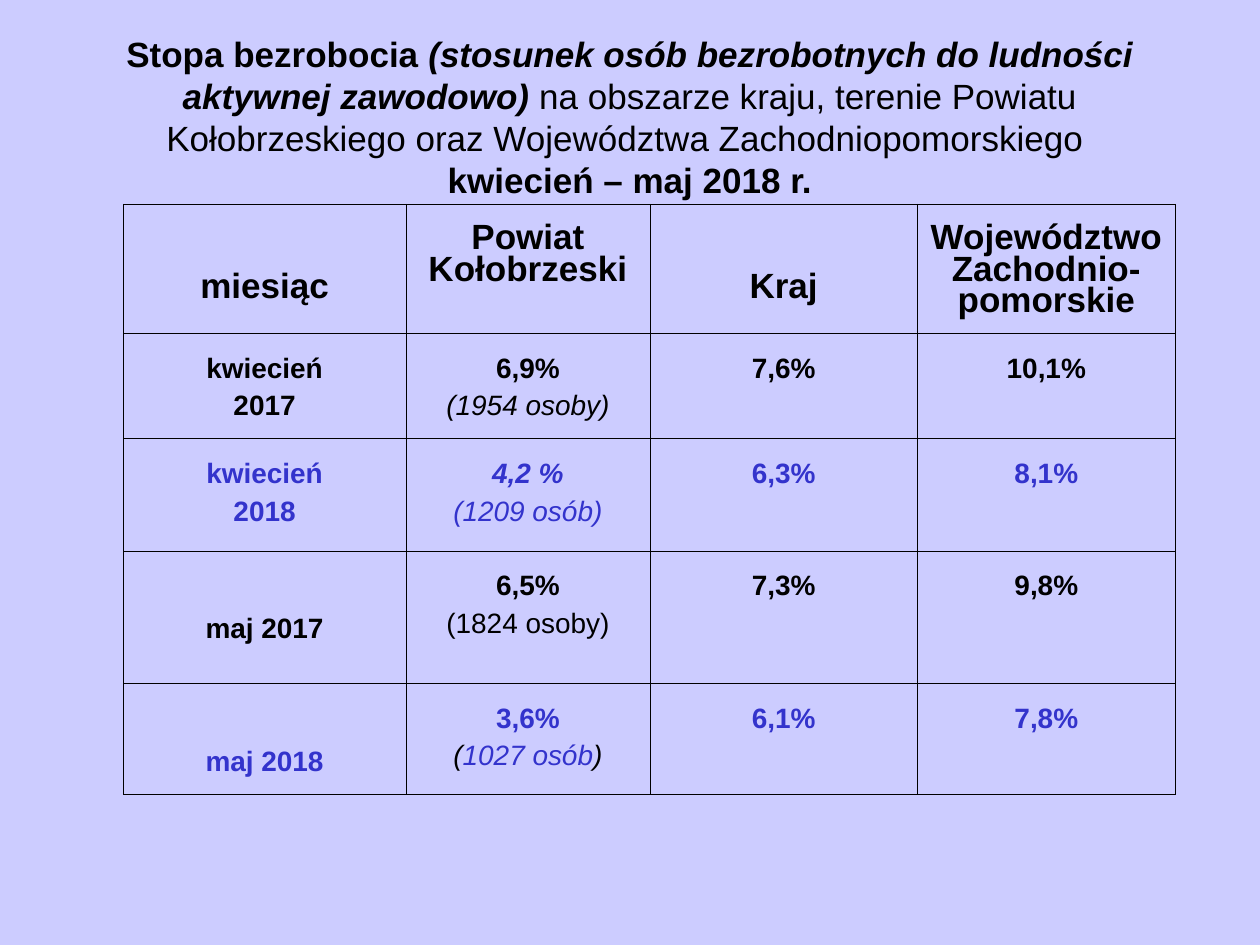
from lxml import etree
from pptx import Presentation
from pptx.dml.color import RGBColor
from pptx.enum import text
from pptx.oxml.ns import qn
from pptx.util import Inches, Pt

BACKGROUND = RGBColor(0xCC, 0xCC, 0xFF)
BLACK = RGBColor(0, 0, 0)
BLUE = RGBColor(0x33, 0x33, 0xCC)
FONT = "Arial"

COL_WIDTHS = (2.24, 1.94, 2.12, 2.05)
ROW_HEIGHTS = (0.96, 0.84, 0.89, 1.05, 0.88)
HEADERS = ("miesiąc", "Powiat Kołobrzeski", "Kraj", "Województwo Zachodnio-pomorskie")

# Month lines, county rate, county head count, country rate, voivodeship rate, colour.
# Rates and counts are lists of (text, style, colour) runs; styles: b bold, i italic.
MONTHS = (
    (("kwiecień", "2017"), ("6,9%", "b"), [("(1954 osoby)", "i", BLACK)], "7,6%", "10,1%", BLACK),
    (("kwiecień", "2018"), ("4,2 %", "bi"), [("(1209 osób)", "i", BLUE)], "6,3%", "8,1%", BLUE),
    (("maj 2017",), ("6,5%", "b"), [("(1824 osoby)", "", BLACK)], "7,3%", "9,8%", BLACK),
    (("maj 2018",), ("3,6%", "b"),
     [("(", "i", BLACK), ("1027 osób", "i", BLUE), (")", "i", BLACK)], "6,1%", "7,8%", BLUE),
)


def add_run(p, words, size, style="", color=BLACK):
    r = p.add_run()
    r.text = words
    r.font.name, r.font.size = FONT, Pt(size)
    r.font.bold, r.font.italic = "b" in style, "i" in style
    r.font.color.rgb = color


def add_title(s, left, top, width, height):
    tf = s.shapes.add_textbox(left, top, width, height).text_frame
    tf.word_wrap = True
    tf.vertical_anchor = text.MSO_ANCHOR.MIDDLE
    p = tf.paragraphs[0]
    p.alignment = text.PP_ALIGN.CENTER
    add_run(p, "Stopa bezrobocia ", 20, "b")
    add_run(p, "(stosunek osób bezrobotnych do ludności aktywnej zawodowo)", 20, "bi")
    add_run(p, " na obszarze kraju, terenie Powiatu Kołobrzeskiego oraz "
               "Województwa Zachodniopomorskiego ", 20)
    p.add_line_break()
    add_run(p, "kwiecień – maj 2018 r.", 20, "b")


def set_borders(cell, edges):
    """Thin black lines, twice as wide on the sides named in edges."""
    tc_pr = cell._tc.get_or_add_tcPr()
    for i, side in enumerate("LRTB"):
        width = Pt(0.23 if side in edges else 0.11)
        ln = etree.Element(qn(f"a:ln{side}"), w=str(int(width)))
        fill = etree.SubElement(ln, qn("a:solidFill"))
        etree.SubElement(fill, qn("a:srgbClr"), val=str(BLACK))
        tc_pr.insert(i, ln)


def fill_cell(cell, lines, size, space, top):
    cell.fill.background()
    cell.margin_left = cell.margin_right = Inches(0.1)
    cell.margin_top, cell.margin_bottom = Inches(top), Inches(0.05)
    tf = cell.text_frame
    for i, runs in enumerate(lines):
        p = tf.add_paragraph() if i else tf.paragraphs[0]
        p.alignment = text.PP_ALIGN.CENTER
        p.line_spacing, p.space_before = 0.81, Pt(space)
        for words, style, color in runs:
            add_run(p, words, size, style, color)


def add_rates_table(s, left, top, width, height):
    n_rows, n_cols = len(ROW_HEIGHTS), len(COL_WIDTHS)
    table = s.shapes.add_table(n_rows, n_cols, left, top, width, height).table
    table.first_row = table.horz_banding = False
    for col, w in zip(table.columns, COL_WIDTHS):
        col.width = Inches(w)
    for row, h in zip(table.rows, ROW_HEIGHTS):
        row.height = Inches(h)

    # Header row: one-word headings sit lower
    for c, heading in enumerate(HEADERS):
        inset = 0.16 if " " in heading else 0.55
        fill_cell(table.cell(0, c), [[(heading, "b", BLACK)]], 20, 5, inset)

    # One row per month: single-line months sit lower
    for r, (month, rate, count, country, region, color) in enumerate(MONTHS, 1):
        columns = (
            [[(line, "b", color)] for line in month],
            [[(*rate, color)], count],
            [[(country, "b", color)]],
            [[(region, "b", color)]],
        )
        for c, lines in enumerate(columns):
            inset = 0.54 if c == 0 and len(month) == 1 else 0.2
            fill_cell(table.cell(r, c), lines, 16, 7, inset)

    # Borders
    for r in range(n_rows):
        for c in range(n_cols):
            edges = ("T" if r == 0 else "") + {0: "L", n_cols - 1: "R"}.get(c, "")
            set_borders(table.cell(r, c), edges)


def main():
    prs = Presentation()
    prs.slide_width, prs.slide_height = Inches(10), Inches(7.5)
    s = prs.slides.add_slide(prs.slide_layouts[6])
    s.background.fill.solid()
    s.background.fill.fore_color.rgb = BACKGROUND
    add_title(s, Inches(0.5), Inches(0.3), Inches(9), Inches(1.25))
    add_rates_table(s, Inches(0.98), Inches(1.62),
                    Inches(sum(COL_WIDTHS)), Inches(sum(ROW_HEIGHTS)))
    prs.save("out.pptx")


if __name__ == "__main__":
    main()
